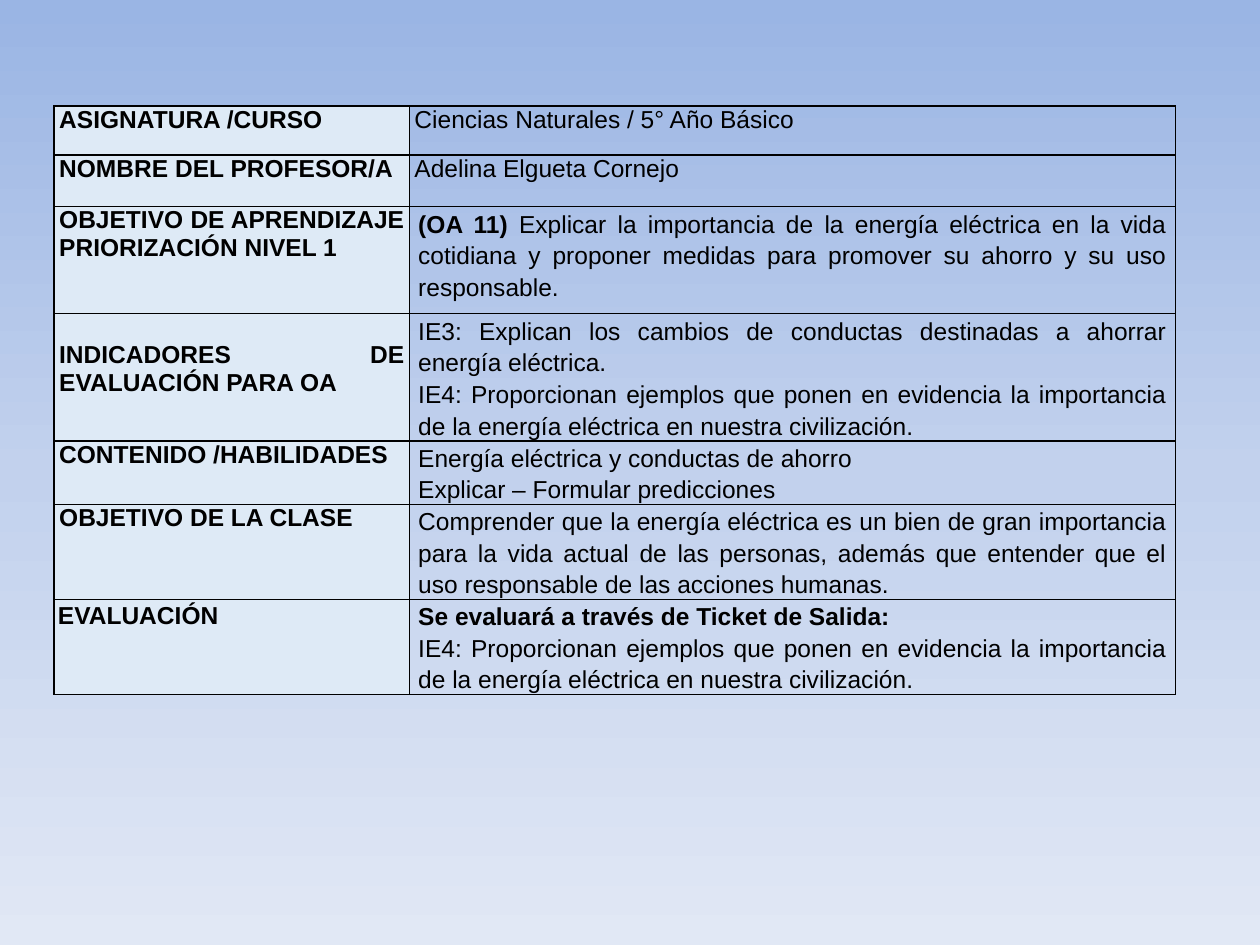
from copy import deepcopy

from pptx import Presentation
from pptx.dml.color import RGBColor
from pptx.enum.text import PP_ALIGN
from pptx.oxml import parse_xml
from pptx.oxml.ns import nsdecls, qn
from pptx.util import Inches, Pt

BLACK = RGBColor(0x00, 0x00, 0x00)
LABEL_FILL = RGBColor(0xDE, 0xEA, 0xF6)
GRADIENT = [
    (0, RGBColor(0x9A, 0xB5, 0xE4)),
    (0.5, RGBColor(0xC2, 0xD1, 0xED)),
    (1, RGBColor(0xE1, 0xE8, 0xF5)),
]

COLUMN_WIDTHS = [2.82, 6.08]
NARROW = (0.04, 0)
WIDE = (0.07, 0)
INDICATOR = (
    "IE4: Proporcionan ejemplos que ponen en evidencia la importancia "
    "de la energía eléctrica en nuestra civilización."
)
ROWS = [
    (0.39, "ASIGNATURA /CURSO", NARROW,
     [[("Ciencias Naturales / 5° Año Básico", False)]], NARROW, 1),
    (0.41, "NOMBRE DEL PROFESOR/A", NARROW,
     [[("Adelina Elgueta Cornejo", False)]], NARROW, 1),
    (0.85, "OBJETIVO DE APRENDIZAJE PRIORIZACIÓN NIVEL 1", NARROW,
     [[("(OA 11) ", True),
       ("Explicar la importancia de la energía eléctrica en la vida cotidiana y "
        "proponer medidas para promover su ahorro y su uso responsable.", False)]],
     WIDE, 1.15),
    (1.01, "INDICADORES DE EVALUACIÓN PARA OA", (0.04, 0.22),
     [[("IE3: Explican los cambios de conductas destinadas a ahorrar "
        "energía eléctrica.", False)],
      [(INDICATOR, False)]], WIDE, 1.15),
    (0.5, "CONTENIDO /HABILIDADES", NARROW,
     [[("Energía eléctrica y conductas de ahorro", False)],
      [("Explicar – Formular predicciones", False)]], WIDE, 1.15),
    (0.75, "OBJETIVO DE LA CLASE", NARROW,
     [[("Comprender que la energía eléctrica es un bien de gran importancia para "
        "la vida actual de las personas, además que entender que el uso "
        "responsable de las acciones humanas.", False)]], WIDE, 1.15),
    (0.75, "EVALUACIÓN", (0.03, 0.02),
     [[("Se evaluará a través de Ticket de Salida:", True)],
      [(INDICATOR, False)]], WIDE, 1.15),
]


class SlideBuilder:
    """Hold the text style and the current slide, and add elements to it."""

    font_name = "Arial"
    font_size = Pt(14)
    border_width = Pt(1)

    def __init__(self, slide):
        self.slide = slide

    def gradient_background(self, colors):
        fill = self.slide.background.fill
        fill.gradient()
        fill.gradient_angle = 270
        first_stop = next(self.slide.element.iter(qn("a:gs")))
        first_stop.addnext(deepcopy(first_stop))
        for stop, (position, color) in zip(fill.gradient_stops, colors):
            stop.position = position
            stop.color.rgb = color

    def table(self, left, top, column_widths, rows):
        heights = [row[0] for row in rows]
        frame = self.slide.shapes.add_table(
            len(rows), len(column_widths), Inches(left), Inches(top),
            Inches(sum(column_widths)), Inches(sum(heights)),
        )
        table = frame.table
        table.first_row = False
        table.horz_banding = False
        for column, width in zip(table.columns, column_widths):
            column.width = Inches(width)
        for index, (height, label, label_insets, body, insets, spacing) in enumerate(rows):
            table.rows[index].height = Inches(height)
            self.cell(table.cell(index, 0), [[(label, True)]], label_insets, 1, LABEL_FILL)
            self.cell(table.cell(index, 1), body, insets, spacing)

    def cell(self, cell, paragraphs, insets, spacing, color=None):
        self.borders(cell)
        if color is None:
            cell.fill.background()
        else:
            cell.fill.solid()
            cell.fill.fore_color.rgb = color
        side, top = insets
        cell.margin_left = cell.margin_right = Inches(side)
        cell.margin_top = Inches(top)
        cell.margin_bottom = 0
        for index, runs in enumerate(paragraphs):
            frame = cell.text_frame
            paragraph = frame.add_paragraph() if index else frame.paragraphs[0]
            self.paragraph(paragraph, runs, spacing)

    def paragraph(self, paragraph, runs, spacing):
        paragraph.alignment = PP_ALIGN.JUSTIFY
        paragraph.line_spacing = spacing
        paragraph.font.name = self.font_name
        paragraph.font.size = self.font_size
        paragraph.font.color.rgb = BLACK
        for text, bold in runs:
            run = paragraph.add_run()
            run.text = text
            run.font.bold = bold

    def borders(self, cell):
        properties = cell._tc.get_or_add_tcPr()
        for side in ("lnL", "lnR", "lnT", "lnB"):
            properties.append(parse_xml(
                f'<a:{side} {nsdecls("a")} w="{self.border_width}"><a:solidFill>'
                f'<a:srgbClr val="{BLACK}"/></a:solidFill></a:{side}>'
            ))


def main():
    presentation = Presentation()
    presentation.slide_width = Inches(10)
    presentation.slide_height = Inches(7.5)
    blank_layout = presentation.slide_layouts[6]
    builder = SlideBuilder(presentation.slides.add_slide(blank_layout))
    builder.gradient_background(GRADIENT)
    builder.table(0.43, 0.84, COLUMN_WIDTHS, ROWS)
    presentation.save("out.pptx")


if __name__ == "__main__":
    main()
